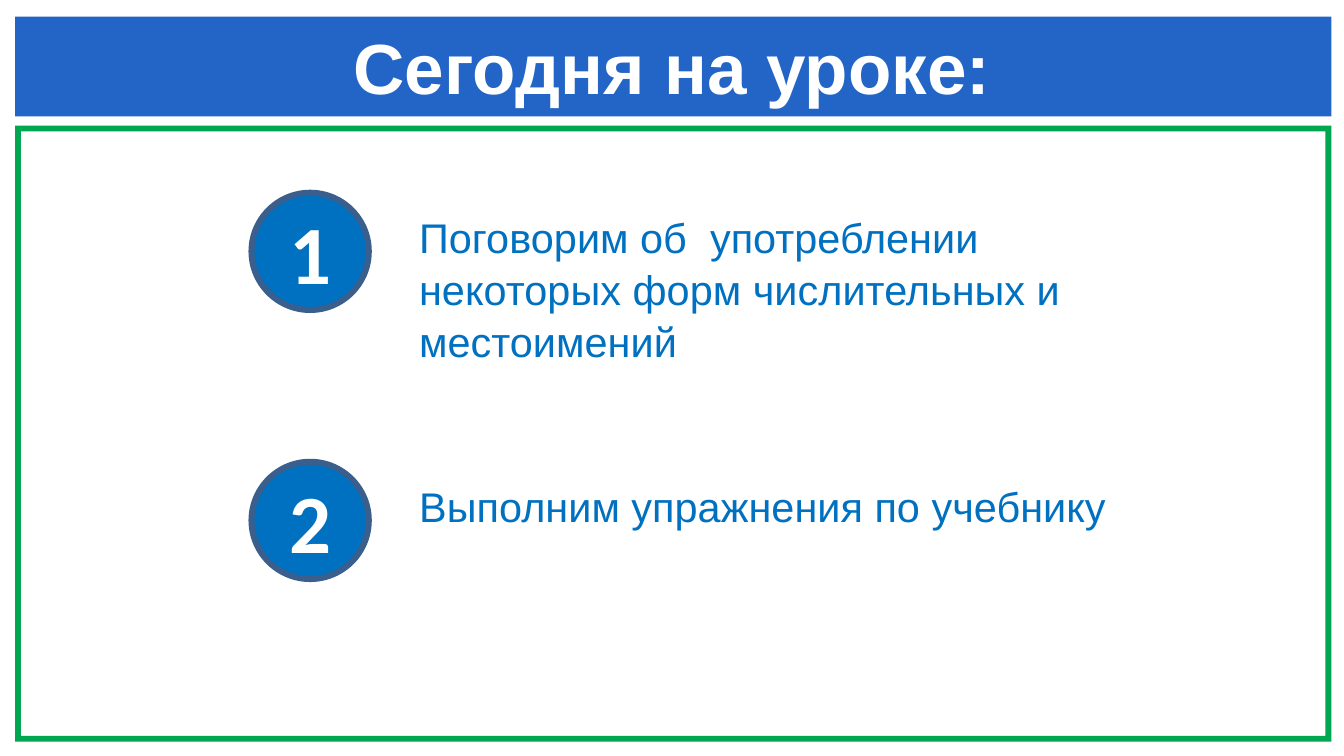
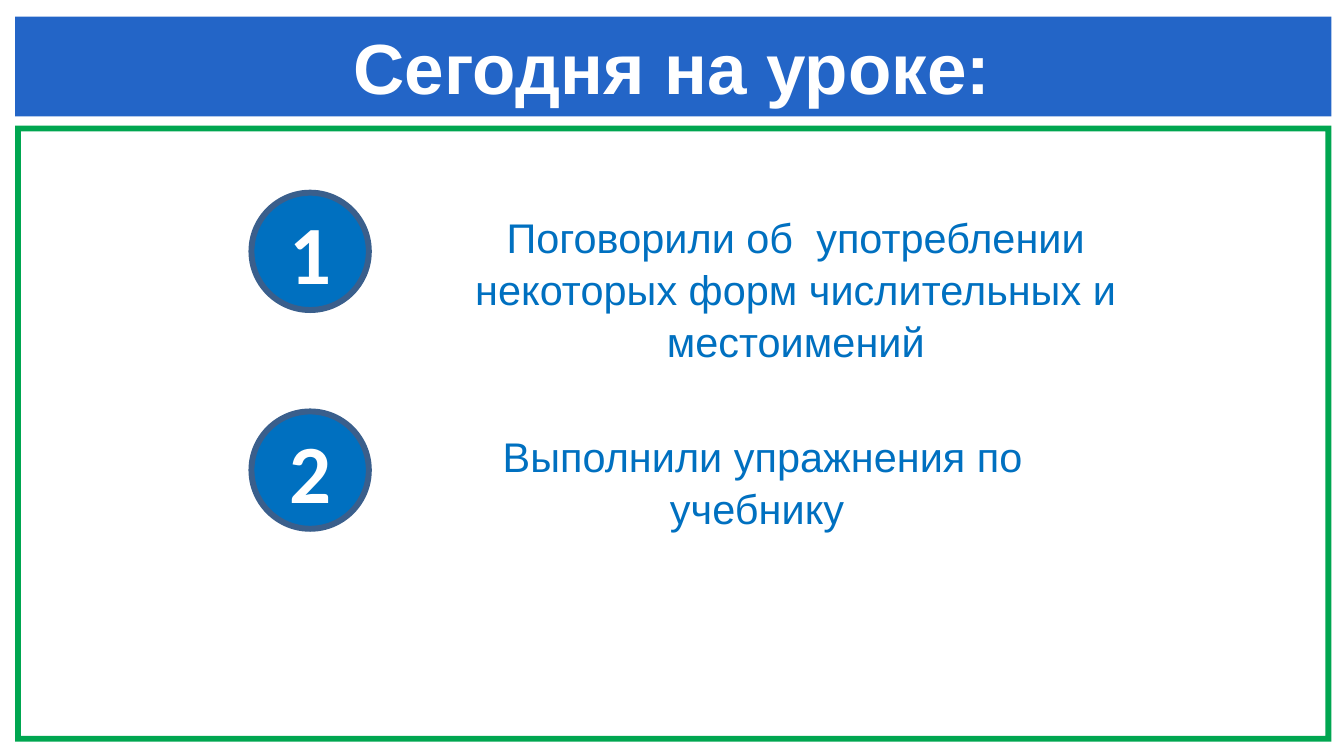
from dataclasses import dataclass
from pptx import Presentation
from pptx import util as u
from pptx.dml import color
from pptx.enum import shapes, text


@dataclass(frozen=True)
class Theme:
    band: str = "2365C7"
    frame: str = "00A650"
    accent: str = "0070C0"
    outline: str = "3A5F8C"
    white: str = "FFFFFF"
    font: str = "Arial"
    number_font: str = "Calibri"
    title_size: int = 24
    item_size: int = 14
    number_size: int = 28
    outline_width: int = 2


THEME = Theme()
LEFT, CENTER = text.PP_ALIGN.LEFT, text.PP_ALIGN.CENTER
TITLE = "Сегодня на уроке:"
BAND_BOX = (0.18, 0.2, 15.7, 1.19)
FRAME_BOX = (0.18, 1.5, 15.7, 7.35)
TITLE_BOX = (0.84, 0.28, 14.35, 1.02)
FRAME_THICKNESS = 0.07
BADGE_SIZE = 1.4

LESSONS = [
    (LEFT, [
        (0.8, 8.99, 1.8, "Поговорим об  употреблении некоторых форм числительных и местоимений"),
        (4.01, 8.2, 0.6, "Выполним упражнения по учебнику"),
    ]),
    (CENTER, [
        (0.8, 8.99, 1.8, "Поговорили об  употреблении некоторых форм числительных и местоимений"),
        (3.41, 8.2, 1.2, "Выполнили упражнения по учебнику "),
    ]),
]


def cm(box):
    return [u.Cm(length) for length in box]


def rgb(value):
    return color.RGBColor.from_string(value)


def write(shape, words, *, size, ink, font=THEME.font, bold=False, align=LEFT,
          anchor=text.MSO_ANCHOR.TOP, spacing=1.0):
    frame = shape.text_frame
    frame.word_wrap = True
    frame.auto_size = text.MSO_AUTO_SIZE.NONE
    frame.vertical_anchor = anchor
    frame.margin_left = frame.margin_top = frame.margin_right = frame.margin_bottom = 0
    paragraph = frame.paragraphs[0]
    paragraph.alignment = align
    paragraph.line_spacing = spacing
    paragraph.space_before = u.Pt(0)
    run = paragraph.add_run()
    run.text = words
    run.font.name = font
    run.font.size = u.Pt(size)
    run.font.bold = bold
    run.font.color.rgb = rgb(ink)


def add_figure(slide, kind, box, fill, outline=None):
    figure = slide.shapes.add_shape(kind, *cm(box))
    figure.shadow.inherit = False
    figure.fill.solid()
    figure.fill.fore_color.rgb = rgb(fill)
    if outline:
        figure.line.color.rgb = rgb(outline)
        figure.line.width = u.Pt(THEME.outline_width)
    else:
        figure.line.fill.background()
    return figure


def share_backdrop(slide, layout):
    frame = add_figure(slide, shapes.MSO_SHAPE.FRAME, FRAME_BOX, THEME.frame)
    frame.adjustments[0] = FRAME_THICKNESS / min(FRAME_BOX[2:])
    band = add_figure(slide, shapes.MSO_SHAPE.RECTANGLE, BAND_BOX, THEME.band)
    for index, part in enumerate((frame, band), start=2):
        layout.shapes.element.insert(index, part.element)


def place_title(slide, box):
    title = slide.shapes.title
    title.left, title.top, title.width, title.height = cm(box)
    write(title, TITLE, size=THEME.title_size, ink=THEME.white, bold=True, align=CENTER)


def add_agenda_item(slide, number, words, box, align):
    left, top, width, height = box
    badge = add_figure(slide, shapes.MSO_SHAPE.OVAL, (left, top, BADGE_SIZE, BADGE_SIZE),
                       THEME.accent, THEME.outline)
    write(badge, str(number), size=THEME.number_size, ink=THEME.white,
          font=THEME.number_font, bold=True, align=CENTER, anchor=text.MSO_ANCHOR.MIDDLE)
    task = slide.shapes.add_textbox(*cm((left + 2, top + 0.2, width, height)))
    write(task, words, size=THEME.item_size, ink=THEME.accent, align=align, spacing=1.05)


def add_agenda(slide, box, items, align):
    left, top = box[:2]
    for number, (offset, width, height, words) in enumerate(items, start=1):
        add_agenda_item(slide, number, words, (left + 2.82, top + offset, width, height), align)


def main():
    deck = Presentation()
    deck.slide_width, deck.slide_height = cm((16.03, 9.02))
    layout = deck.slide_layouts.get_by_name("Title Only")
    for index, (align, items) in enumerate(LESSONS):
        slide = deck.slides.add_slide(layout)
        if index == 0:
            share_backdrop(slide, layout)
        place_title(slide, TITLE_BOX)
        add_agenda(slide, FRAME_BOX, items, align)
    deck.save("out.pptx")


if __name__ == "__main__":
    main()
